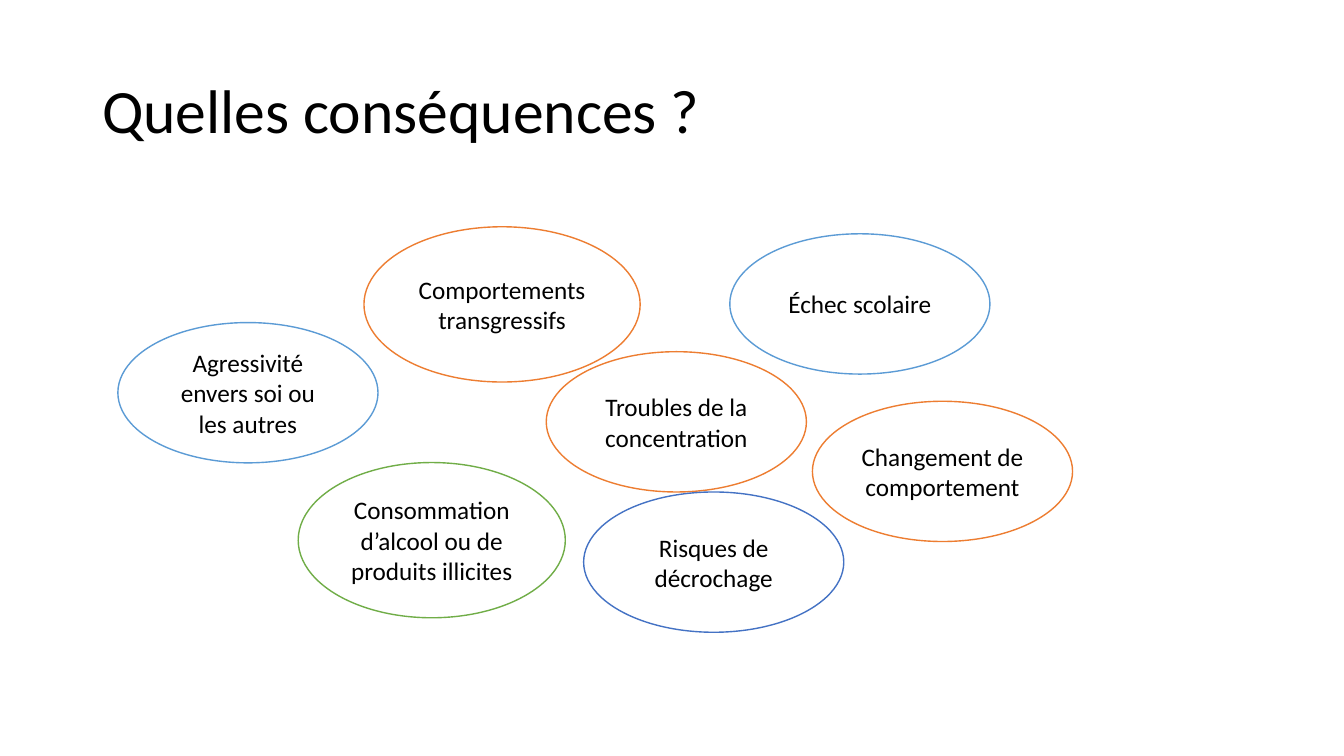
import pptx
import pptx.util
import pptx.dml.color
import pptx.enum.shapes
import pptx.enum.text

Pt = pptx.util.Pt
RGBColor = pptx.dml.color.RGBColor
PP_ALIGN = pptx.enum.text.PP_ALIGN

BLACK = RGBColor(0x00, 0x00, 0x00)
WHITE = RGBColor(0xFF, 0xFF, 0xFF)
ORANGE = RGBColor(0xED, 0x7D, 0x31)
SKY = RGBColor(0x5B, 0x9B, 0xD5)
BLUE = RGBColor(0x44, 0x72, 0xC4)
GREEN = RGBColor(0x70, 0xAD, 0x47)


def write_text(sp, text, font_format, paragraph_format):
    tf = sp.text_frame
    tf.word_wrap = True
    tf.vertical_anchor = pptx.enum.text.MSO_ANCHOR.MIDDLE
    p = tf.paragraphs[0]
    for name, value in paragraph_format.items():
        setattr(p, name, value)
    r = p.add_run()
    r.text = text
    for name, value in font_format.items():
        setattr(r.font, name, value)
    r.font.color.rgb = BLACK


prs = pptx.Presentation()
prs.slide_width = Pt(960)
prs.slide_height = Pt(540)
s = prs.slides.add_slide(prs.slide_layouts[6])

title = s.shapes.add_textbox(Pt(66), Pt(28.75), Pt(828), Pt(104.4))
write_text(title, "Quelles conséquences ?", {"name": "Calibri", "size": Pt(44)},
           {"alignment": PP_ALIGN.LEFT, "line_spacing": 0.9})

STANDARD = (185.8, 100.2)
consequences = [
    ("Changement de comportement", 580.3, 286.6, STANDARD, ORANGE),
    ("Troubles de la concentration", 390.2, 251.2, STANDARD, ORANGE),
    ("Échec scolaire", 521.3, 167, STANDARD, SKY),
    ("Risques de décrochage", 416.9, 351.4, STANDARD, BLUE),
    ("Comportements transgressifs", 260, 162, (197.3, 110.9), ORANGE),
    ("Agressivité envers soi ou les autres", 84.2, 230.4, STANDARD, SKY),
    ("Consommation d’alcool ou de produits illicites", 213, 330.4, (190.8, 110.9), GREEN),
]
for text, left, top, (width, height), color in consequences:
    sp = s.shapes.add_shape(pptx.enum.shapes.MSO_SHAPE.OVAL,
                            Pt(left), Pt(top), Pt(width), Pt(height))
    sp.shadow.inherit = False
    sp.fill.solid()
    sp.fill.fore_color.rgb = WHITE
    sp.line.color.rgb = color
    sp.line.width = Pt(1)
    write_text(sp, text, {"name": "Calibri", "size": Pt(18)},
               {"alignment": PP_ALIGN.CENTER})

prs.save("out.pptx")
